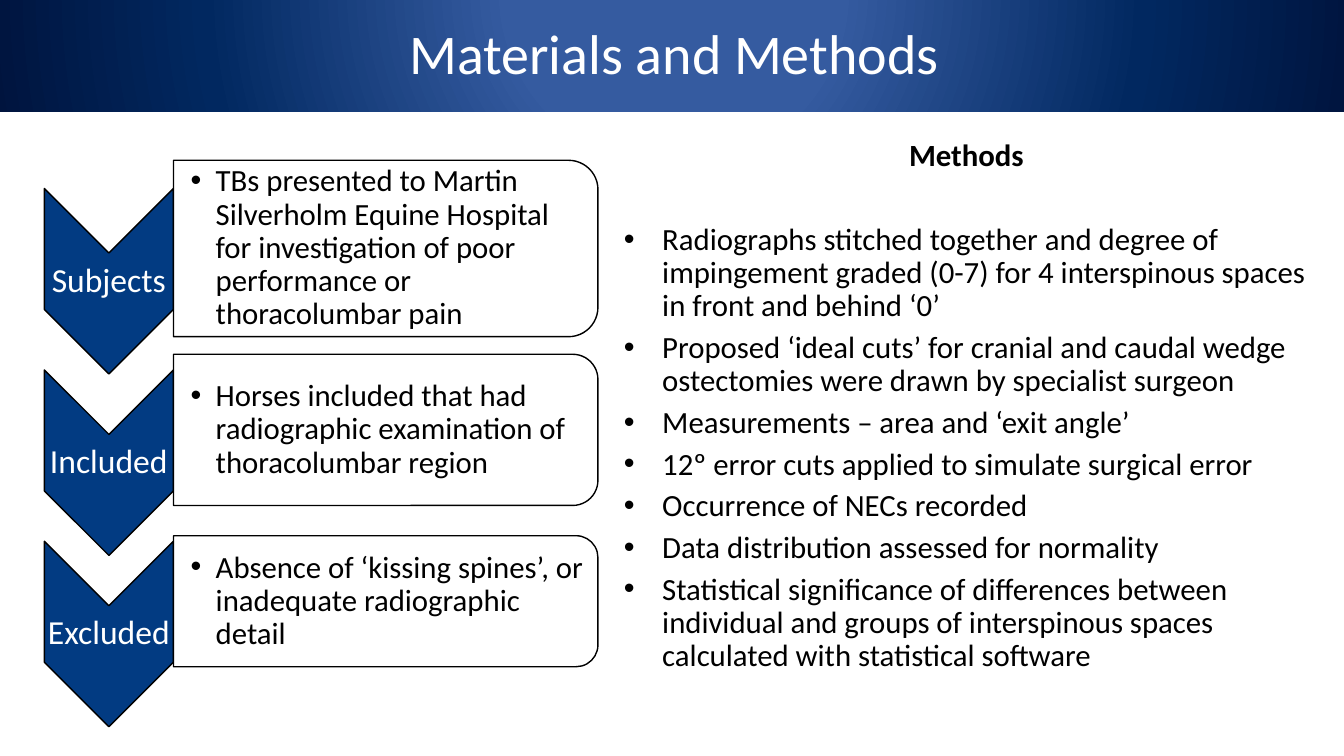
from lxml.etree import SubElement
from pptx import Presentation
from pptx.dml.color import RGBColor
from pptx.enum.shapes import MSO_SHAPE
from pptx.enum.text import MSO_ANCHOR, PP_ALIGN
from pptx.oxml.ns import qn
from pptx.util import Inches, Pt

NAVY = RGBColor(0x02, 0x3B, 0x82)
WHITE = RGBColor(0xFF, 0xFF, 0xFF)
BLACK = RGBColor(0x00, 0x00, 0x00)
HEADER_STOPS = [
    (24, RGBColor(0x35, 0x5B, 0xA0)),
    (68, RGBColor(0x01, 0x28, 0x60)),
    (100, RGBColor(0x00, 0x14, 0x3E)),
]
COLUMNS, ROWS = 40, 30

# label, text, middle row of the chevron, height of the box in rows
STEPS = [
    ("Subjects", "TBs presented to Martin Silverholm Equine Hospital for "
     "investigation of poor performance or thoracolumbar pain", 11.16, 7),
    ("Included", "Horses included that had radiographic examination of "
     "thoracolumbar region", 18.36, 6),
    ("Excluded", "Absence of ‘kissing spines’, or inadequate radiographic "
     "detail", 25.16, 5.2),
]
METHODS = [
    "Radiographs stitched together and degree of impingement graded (0-7) "
    "for 4 interspinous spaces in front and behind ‘0’",
    "Proposed ‘ideal cuts’ for cranial and caudal wedge ostectomies were "
    "drawn by specialist surgeon",
    "Measurements – area and ‘exit angle’",
    "12º error cuts applied to simulate surgical error",
    "Occurrence of NECs recorded",
    "Data distribution assessed for normality",
    "Statistical significance of differences between individual and groups "
    "of interspinous spaces calculated with statistical software",
]


def set_attributes(target, values):
    for name, value in values.items():
        setattr(target, name, value)


class SlideBuilder:
    font = "Calibri"
    body_size = Pt(22)

    def __init__(self, presentation):
        self.slide = presentation.slides.add_slide(presentation.slide_layouts[6])
        self.column = presentation.slide_width / COLUMNS
        self.row = presentation.slide_height / ROWS

    def frame(self, column, row, columns, rows, turned=False):
        """Left, top, width and height of an area centred at column, row."""
        width, height = columns * self.column, rows * self.row
        if turned:
            width, height = height, width
        left = column * self.column - width / 2
        top = row * self.row - height / 2
        return [round(length) for length in (left, top, width, height)]

    def turned_shape(self, kind, area, color, opacity=100):
        """Outlined shape turned a quarter; area is what it covers once turned."""
        shape = self.slide.shapes.add_shape(kind, *self.frame(*area, turned=True))
        shape.rotation = 90
        shape.shadow.inherit = False
        shape.fill.solid()
        shape.fill.fore_color.rgb = color
        shape.line.color.rgb = BLACK
        shape.line.width = Pt(1)
        if opacity < 100:
            fill_color = shape._element.spPr.find(qn("a:solidFill"))[0]
            SubElement(fill_color, qn("a:alpha"), val=str(opacity * 1000))

    def text_box(self, area, anchor, **margins):
        text_frame = self.slide.shapes.add_textbox(*self.frame(*area)).text_frame
        set_attributes(text_frame, {"word_wrap": True, "vertical_anchor": anchor, **margins})
        return text_frame

    def add_text(self, paragraph, text, font=None, **spacing):
        set_attributes(paragraph, spacing)
        run = paragraph.add_run()
        run.text = text
        style = {"name": self.font, "size": self.body_size, "color": BLACK, **(font or {})}
        run.font.color.rgb = style.pop("color")
        set_attributes(run.font, style)

    def bullet(self, paragraph, text, indent, **spacing):
        self.add_text(paragraph, text, line_spacing=0.9, **spacing)
        properties = paragraph._p.get_or_add_pPr()
        properties.set("marL", str(Inches(indent)))
        properties.set("indent", str(-Inches(indent)))
        SubElement(properties, qn("a:buFont"), typeface="Arial")
        SubElement(properties, qn("a:buChar"), char="•")

    def step(self, label, text, row, box_rows):
        """Chevron with its label, and the box of text beside it."""
        narrow = dict.fromkeys(
            ("margin_left", "margin_top", "margin_right", "margin_bottom"), Inches(0.02))
        box_row = row - 1.3
        self.turned_shape(MSO_SHAPE.CHEVRON, (3.24, row, 3.84, 7.36), NAVY)
        label_frame = self.text_box((3.24, row, 3.84, 2.2), MSO_ANCHOR.MIDDLE, **narrow)
        self.add_text(label_frame.paragraphs[0], label, {"size": Pt(24), "color": WHITE},
                      alignment=PP_ALIGN.CENTER, line_spacing=0.9)
        self.turned_shape(MSO_SHAPE.ROUND_2_SAME_RECTANGLE,
                          (11.48, box_row, 12.63, box_rows), WHITE, opacity=90)
        text_frame = self.text_box((11.37, box_row, 12.42, box_rows - 0.6), MSO_ANCHOR.MIDDLE,
                                   **{**narrow, "margin_left": Inches(0.17)})
        self.bullet(text_frame.paragraphs[0], text, 0.25)

    def methods(self, heading, items):
        text_frame = self.text_box((28.76, 16.86, 20.97, 23), MSO_ANCHOR.TOP)
        self.add_text(text_frame.paragraphs[0], heading, {"bold": True},
                      alignment=PP_ALIGN.CENTER, line_spacing=0.9, space_after=Pt(36))
        for item in items:
            self.bullet(text_frame.add_paragraph(), item, 0.38, space_after=Pt(6))

    def header(self, title):
        shape = self.slide.shapes.add_shape(
            MSO_SHAPE.RECTANGLE, *self.frame(20.06, 2.08, 40.95, 4.72))
        shape.shadow.inherit = False
        shape.line.fill.background()
        shape.fill.gradient()
        gradient = shape._element.spPr.find(qn("a:gradFill"))
        for child in list(gradient):
            gradient.remove(child)
        stops = SubElement(gradient, qn("a:gsLst"))
        for position, color in HEADER_STOPS:
            stop = SubElement(stops, qn("a:gs"), pos=str(position * 1000))
            SubElement(stop, qn("a:srgbClr"), val=str(color))
        circle = SubElement(gradient, qn("a:path"), {"path": "circle"})
        SubElement(circle, qn("a:fillToRect"), l="50000", t="-80000", r="50000", b="180000")
        shape.text_frame.vertical_anchor = MSO_ANCHOR.MIDDLE
        self.add_text(shape.text_frame.paragraphs[0], title, {"size": Pt(40), "color": WHITE},
                      alignment=PP_ALIGN.CENTER)


def main():
    presentation = Presentation()
    presentation.slide_width = Inches(13.33)
    presentation.slide_height = Inches(7.5)
    builder = SlideBuilder(presentation)
    for step in STEPS:
        builder.step(*step)
    builder.methods("Methods", METHODS)
    builder.header("Materials and Methods")
    presentation.save("out.pptx")


if __name__ == "__main__":
    main()
